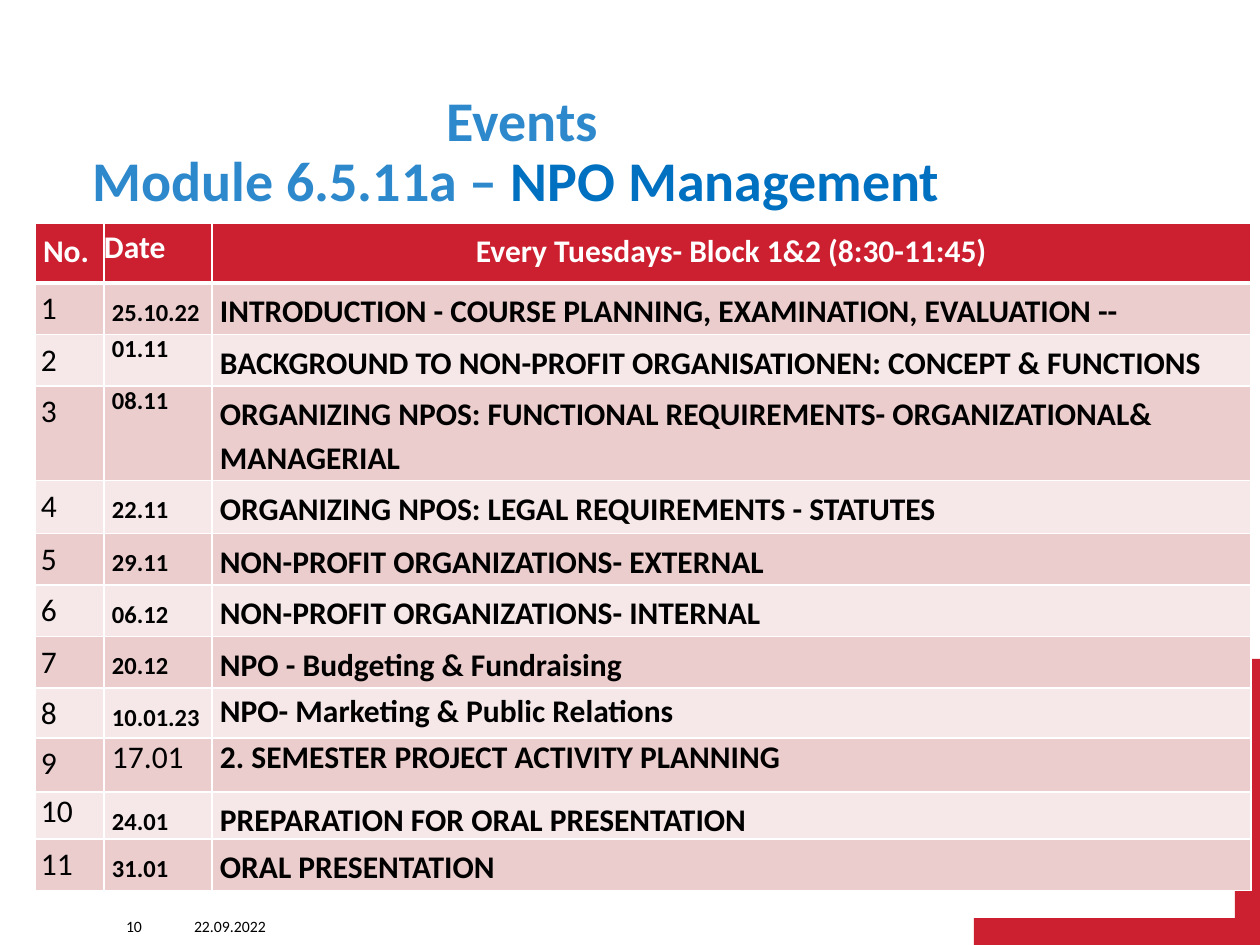
from lxml import etree
from pptx import Presentation
from pptx.dml.color import RGBColor
from pptx.enum.shapes import MSO_SHAPE
from pptx.enum.text import MSO_ANCHOR, MSO_AUTO_SIZE, PP_ALIGN
from pptx.oxml.ns import qn
from pptx.util import Pt

CORNER = MSO_SHAPE.CORNER
BOTTOM = MSO_ANCHOR.BOTTOM
GROW = MSO_AUTO_SIZE.SHAPE_TO_FIT_TEXT
LEFT, CENTER, RIGHT = PP_ALIGN.LEFT, PP_ALIGN.CENTER, PP_ALIGN.RIGHT

EMU_PER_PX = 914400 / 126
RED, WHITE, BLACK = "CC1F2F", "FFFFFF", "000000"
BANDS = ("F6E8E8", "ECCDCD")
LIGHT_BLUE, BLUE = "2D89CC", "0070C0"


def px(length):
    return round(length * EMU_PER_PX)


def color(value):
    return RGBColor.from_string(value)


class SlideBuilder:
    font_name = "Calibri"

    def __init__(self, slide):
        self.slide = slide

    def style(self, para, size, ink=BLACK, bold=False, align=LEFT, spacing=1.0):
        para.alignment = align
        para.line_spacing = spacing
        font = para.font
        font.name, font.size, font.bold = self.font_name, Pt(size), bold
        font.color.rgb = color(ink)

    def corner(self, left, top, width, height, adjustments):
        shape = self.slide.shapes.add_shape(
            CORNER, px(left), px(top), px(width), px(height))
        shape.shadow.inherit = False
        shape.fill.solid()
        shape.fill.fore_color.rgb = color(RED)
        shape.line.fill.background()
        for index, value in enumerate(adjustments):
            shape.adjustments[index] = value
        shape._element.spPr.find(qn("a:xfrm")).set("flipH", "1")

    def text_box(self, left, top, width, height, wrap=True):
        box = self.slide.shapes.add_textbox(
            px(left), px(top), px(width), px(height))
        frame = box.text_frame
        frame.word_wrap = wrap
        frame.vertical_anchor = BOTTOM
        frame.margin_left = frame.margin_right = 0
        frame.margin_top = frame.margin_bottom = 0
        return frame

    def title(self, bounds, lines):
        para = self.text_box(*bounds).paragraphs[0]
        self.style(para, 32, LIGHT_BLUE, bold=True, align=CENTER, spacing=0.9)
        for index, line in enumerate(lines):
            if index:
                para.add_line_break()
            for text, ink in line:
                span = para.add_run()
                span.text = text
                span.font.color.rgb = color(ink)

    def footer(self, bounds, text, align=LEFT, wrap=True):
        frame = self.text_box(*bounds, wrap=wrap)
        frame.auto_size = GROW
        para = frame.paragraphs[0]
        para.text = text
        self.style(para, 9, align=align)

    def table(self, left, top, widths, heights):
        table = self.slide.shapes.add_table(
            len(heights), len(widths), px(left), px(top),
            px(sum(widths)), px(sum(heights))).table
        table.horz_banding = False
        for column, width in zip(table.columns, widths):
            column.width = px(width)
        for row, height in zip(table.rows, heights):
            row.height = px(height)
        return table

    def cell(self, cell, text, fill, margins, borders, **style):
        cell.margin_left = cell.margin_right = px(margins[0])
        cell.margin_top, cell.margin_bottom = px(margins[1]), px(margins[2])
        properties = cell._tc.get_or_add_tcPr()
        for side, points in zip("LRTB", borders):
            line = etree.SubElement(properties, qn(f"a:ln{side}"), w=str(Pt(points)))
            solid = etree.SubElement(line, qn("a:solidFill"))
            etree.SubElement(solid, qn("a:srgbClr"), val=WHITE)
        cell.fill.solid()
        cell.fill.fore_color.rgb = color(fill)
        para = cell.text_frame.paragraphs[0]
        para.text = text
        self.style(para, **style)


# Margins are sides, top, bottom
ROOMY, FLAT, NARROW, NONE = (8, 4, 4), (8, 0, 0), (6, 1, 0), (0, 0, 0)

HEADERS = [
    ("No.", ROOMY, LEFT),
    ("Date", NONE, LEFT),
    ("Every Tuesdays- Block 1&2 (8:30-11:45)", ROOMY, CENTER),
]

# Row height, date, topic
EVENTS = [
    (40, "25.10.22", "INTRODUCTION - COURSE PLANNING, EXAMINATION, EVALUATION --"),
    (43, "01.11", "BACKGROUND TO NON-PROFIT ORGANISATIONEN: CONCEPT & FUNCTIONS"),
    (42, "08.11", "ORGANIZING NPOS: FUNCTIONAL REQUIREMENTS- ORGANIZATIONAL& MANAGERIAL"),
    (53, "22.11", "ORGANIZING NPOS: LEGAL REQUIREMENTS - STATUTES"),
    (49, "29.11", "NON-PROFIT ORGANIZATIONS- EXTERNAL"),
    (49, "06.12", "NON-PROFIT ORGANIZATIONS- INTERNAL"),
    (39, "20.12", "NPO - Budgeting & Fundraising"),
    (50, "10.01.23", "NPO- Marketing & Public Relations"),
    (54, "17.01", "2. SEMESTER PROJECT ACTIVITY PLANNING"),
    (45, "24.01", "PREPARATION FOR ORAL PRESENTATION"),
    (50, "31.01", "ORAL PRESENTATION"),
]

# Rows that differ from the usual line spacing, size or margins
NUMBER_SPACING = {10: 1.0}
DATE_SPACING = {2: 1.0, 3: 1.0, 9: 1.0}
TOPIC_SPACING = {8: 1.0, 9: 1.0, 10: 1.25}
PLAIN_DATE_ROW = 9
FLAT_TOPIC_ROWS = (9, 10)


def main():
    deck = Presentation()
    deck.slide_width, deck.slide_height = px(1260), px(945)
    page = SlideBuilder(deck.slides.add_slide(deck.slide_layouts[6]))

    # Corner decoration
    page.corner(974, 659, 287, 287, (0.097, 0.091))

    # Title
    page.title((87, 86, 871, 128), [
        [("Events", LIGHT_BLUE)],
        [("Module 6.5.11a – ", LIGHT_BLUE), ("NPO Management ", BLUE)],
    ])

    # Footer
    page.footer((194, 915, 496, 21), "22.09.2022")
    page.footer((73, 917, 69, 19), "10", align=RIGHT, wrap=False)

    # Schedule header
    schedule = page.table(35, 223, (69, 108, 1039),
                          [60] + [height for height, _, _ in EVENTS])
    for column, (text, margins, align) in enumerate(HEADERS):
        page.cell(schedule.cell(0, column), text, RED, margins, (1, 1, 1, 3),
                  size=18, ink=WHITE, bold=True, align=align, spacing=1.15)

    # Schedule rows
    for number, (_, date, topic) in enumerate(EVENTS, start=1):
        plain = number == PLAIN_DATE_ROW
        topic_margins = FLAT if number in FLAT_TOPIC_ROWS else ROOMY
        entries = [
            (str(number), NARROW, 18, False, NUMBER_SPACING.get(number, 1.15)),
            (date, FLAT, 18 if plain else 14, not plain, DATE_SPACING.get(number, 1.5)),
            (topic, topic_margins, 18, True, TOPIC_SPACING.get(number, 1.15)),
        ]
        borders = (1, 1, 3 if number == 1 else 1, 1)
        for column, (text, margins, size, bold, spacing) in enumerate(entries):
            page.cell(schedule.cell(number, column), text, BANDS[number % 2],
                      margins, borders, size=size, bold=bold, spacing=spacing)

    deck.save("out.pptx")


if __name__ == "__main__":
    main()
